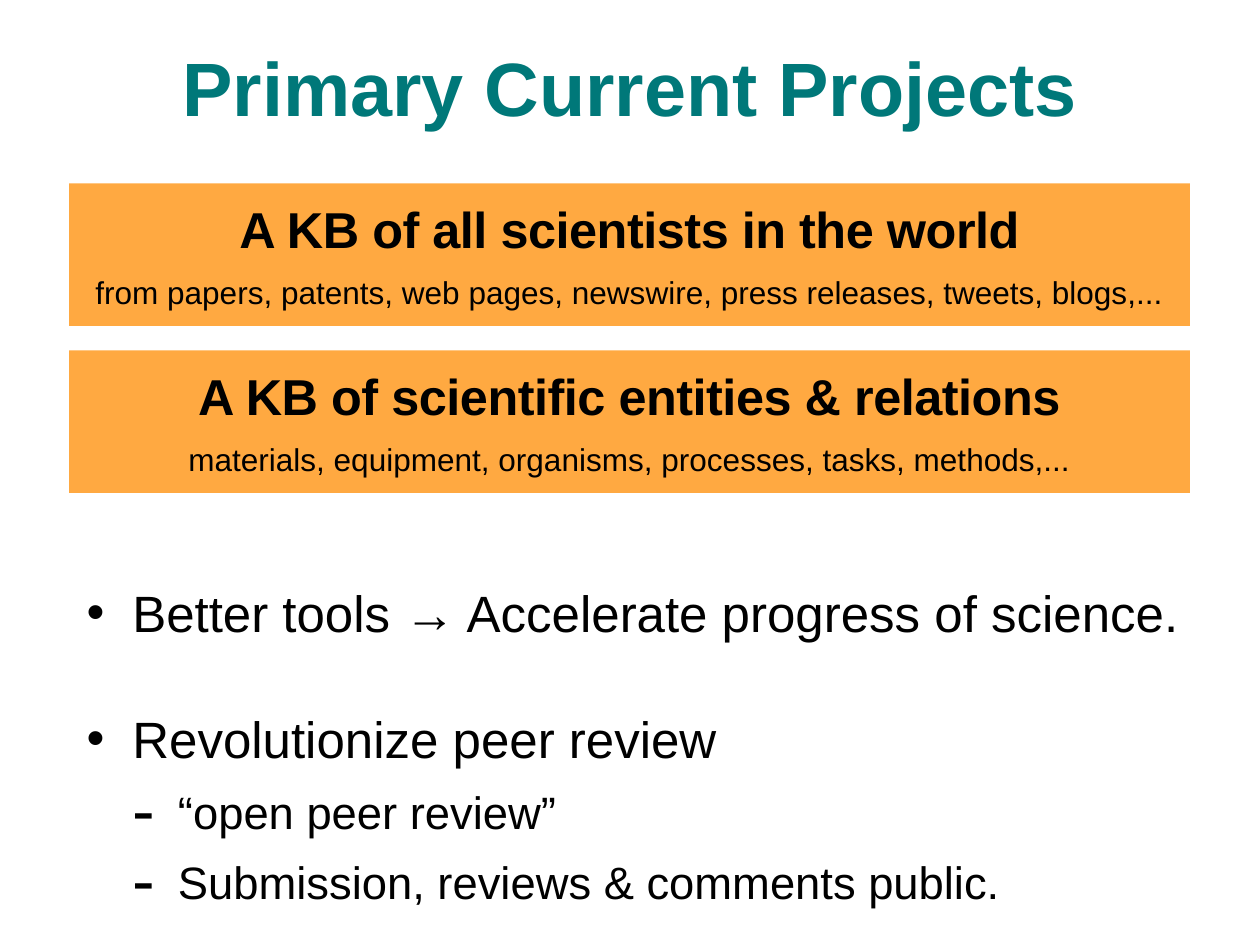
import pptx
import pptx.dml.color
import pptx.enum.shapes
import pptx.enum.text
import pptx.util

Pt = pptx.util.Pt
ALIGN = pptx.enum.text.PP_ALIGN
ANCHOR = pptx.enum.text.MSO_ANCHOR
FIT = pptx.enum.text.MSO_AUTO_SIZE

HUES = {"title": "007879", "text": "000000", "box": "FFA941"}


class Deck:
    """Holds the style and the current slide."""

    font = "Arial"
    inset = 3

    def __init__(self, wide, high):
        self.prs = pptx.Presentation()
        self.prs.slide_width, self.prs.slide_height = Pt(wide), Pt(high)
        self.slide = self.prs.slides.add_slide(self.prs.slide_layouts[1])

    def hue(self, name):
        return pptx.dml.color.RGBColor.from_string(HUES[name])

    def place(self, shape, area):
        shape.left, shape.top, shape.width, shape.height = map(Pt, area)

    def frame(self, shape, inset, anchor, wrap=True):
        frame = shape.text_frame
        frame.auto_size = FIT.NONE
        frame.word_wrap = wrap
        frame.vertical_anchor = anchor
        frame.margin_left = frame.margin_right = Pt(inset)
        frame.margin_top = frame.margin_bottom = Pt(inset)
        return frame

    def line(self, frame, index, text, size, gap=0, bold=False,
             align=ALIGN.LEFT, hue="text"):
        para = frame.add_paragraph() if index else frame.paragraphs[0]
        para.alignment = align
        para.space_before = Pt(gap)
        run = para.add_run()
        run.text = text
        run.font.name, run.font.size, run.font.bold = self.font, Pt(size), bold
        run.font.color.rgb = self.hue(hue)
        return para

    def bullet(self, para, level, mark, scale, left, hang):
        para.level = level
        props = para._p.get_or_add_pPr()
        props.set("marL", str(Pt(left)))
        props.set("indent", str(-Pt(hang)))
        for tag, key, value in (("a:buSzPct", "val", str(scale * 1000)),
                                ("a:buFont", "typeface", self.font),
                                ("a:buChar", "char", mark)):
            item = pptx.oxml.xmlchemy.OxmlElement(tag)
            item.set(key, value)
            props.append(item)

    def title(self, text, area):
        shape = self.slide.shapes.title
        self.place(shape, area)
        frame = self.frame(shape, self.inset, ANCHOR.MIDDLE)
        self.line(frame, 0, text, 48, bold=True, align=ALIGN.CENTER,
                  hue="title")

    def list(self, items, area):
        shape = self.slide.placeholders[1]
        self.place(shape, area)
        frame = self.frame(shape, self.inset, ANCHOR.TOP)
        frame.margin_top = Pt(6)
        for index, (level, text) in enumerate(items):
            size, gap, mark, scale, left = LEVELS[level]
            para = self.line(frame, index, text, size, gap if index else 0)
            self.bullet(para, level, mark, scale, left, 29)

    def box(self, head, note, area):
        kind = pptx.enum.shapes.MSO_SHAPE.RECTANGLE
        shape = self.slide.shapes.add_shape(kind, *map(Pt, area))
        shape.shadow.inherit = False
        shape.fill.solid()
        shape.fill.fore_color.rgb = self.hue("box")
        shape.line.fill.background()
        frame = self.frame(shape, 13.5, ANCHOR.MIDDLE, wrap=False)
        para = self.line(frame, 0, head, 32, bold=True, align=ALIGN.CENTER)
        para.runs[0].font._element.set("spc", "-30")
        self.line(frame, 1, note, 20, gap=9, align=ALIGN.CENTER)


# Size, space before, bullet, bullet scale and indent of each list level
LEVELS = [(32.4, 41, "•", 100, 47), (28.8, 10, "-", 150, 76)]

AIMS = [
    (0, "Better tools → Accelerate progress of science."),
    (0, "Revolutionize peer review"),
    (1, "“open peer review”"),
    (1, "Submission, reviews & comments public."),
]

BASES = [
    ("A KB of all scientists in the world",
     "from papers, patents, web pages, newswire, press releases, tweets, "
     "blogs,..."),
    ("A KB of scientific entities & relations",
     "materials, equipment, organisms, processes, tasks, methods,..."),
]


def main():
    deck = Deck(800, 600)

    # Title and aims
    deck.title("Primary Current Projects", (11, 16, 778, 77))
    deck.list(AIMS, (34, 363, 775, 211))

    # Knowledge bases
    for row, (head, note) in enumerate(BASES):
        deck.box(head, note, (44, 116.5 + 106 * row, 711.5, 90.5))

    deck.prs.save("out.pptx")


if __name__ == "__main__":
    main()
